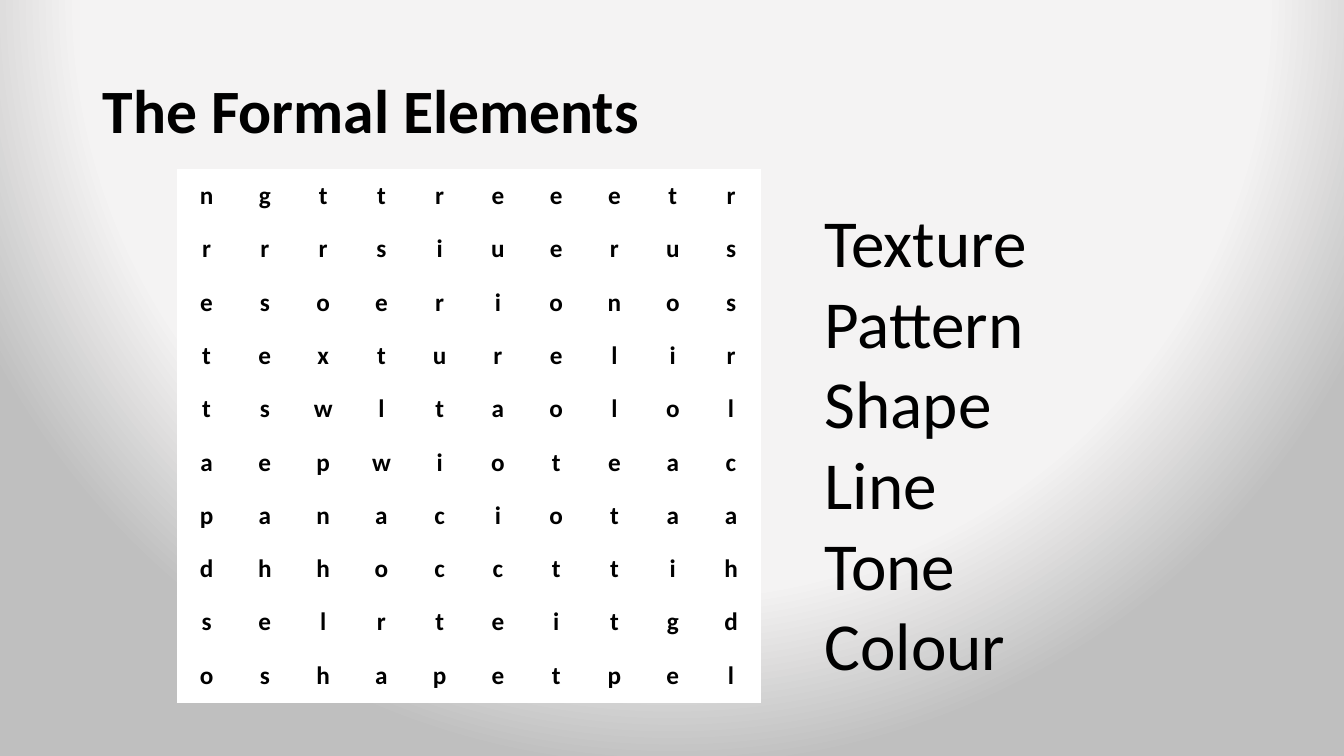
from pptx import Presentation
from pptx.dml.color import RGBColor
from pptx.enum.text import MSO_ANCHOR, MSO_AUTO_SIZE, PP_ALIGN
from pptx.oxml import parse_xml
from pptx.oxml.ns import nsdecls, qn
from pptx.util import Inches, Pt

LEFT, CENTER = PP_ALIGN.LEFT, PP_ALIGN.CENTER
MIDDLE = MSO_ANCHOR.MIDDLE
FIXED, GROW = MSO_AUTO_SIZE.NONE, MSO_AUTO_SIZE.SHAPE_TO_FIT_TEXT
FONT = "Calibri"
COLORS = {"ink": "000000", "cell": "FFFFFF", "glow": "F4F3F3", "edge": "BFBFBF"}
STOPS = [(0, "glow"), (40, "glow"), (77, "glow"), (100, "edge")]
LETTERS = [
    "ngttreeetr",
    "rrrsiuerus",
    "esoerionos",
    "texturelir",
    "tswltaolol",
    "aepwioteac",
    "panaciotaa",
    "dhhoccttih",
    "selrteitgd",
    "oshapetpel",
]
WORDS = ["Texture", "Pattern", "Shape", "Line", "Tone", "Colour"]


class Board:
    """Hold the slide and its style, and add each kind of element."""

    def __init__(self, slide):
        self.slide = slide

    def style(self, frame, size, bold=False, align=LEFT):
        for para in frame.paragraphs:
            para.alignment = align
            for run in para.runs:
                run.font.name = FONT
                run.font.size = Pt(size)
                run.font.bold = bold
                run.font.color.rgb = RGBColor.from_string(COLORS["ink"])

    def glow(self):
        self.slide.background.fill.gradient()
        old = self.slide.element.find(".//" + qn("a:gradFill"))
        stops = "".join(
            f'<a:gs pos="{pos * 1000}"><a:srgbClr val="{COLORS[name]}"/></a:gs>'
            for pos, name in STOPS
        )
        new = parse_xml(
            f'<a:gradFill {nsdecls("a")} rotWithShape="1"><a:gsLst>{stops}</a:gsLst>'
            '<a:path path="circle"><a:fillToRect l="10000" t="-25000" r="10000" '
            'b="125000"/></a:path></a:gradFill>'
        )
        old.getparent().replace(old, new)

    def title(self, text, box):
        shape = self.slide.shapes.title
        shape.left, shape.top, shape.width, shape.height = map(Inches, box)
        frame = shape.text_frame
        frame.text = text
        frame.auto_size = FIXED
        frame.vertical_anchor = MIDDLE
        frame.paragraphs[0].line_spacing = 0.9
        self.style(frame, 44, bold=True)

    def grid(self, rows, box):
        table = self.slide.shapes.add_table(
            len(rows), len(rows[0]), *map(Inches, box)
        ).table
        table.first_row = table.horz_banding = False
        for r, row in enumerate(rows):
            for c, letter in enumerate(row):
                cell = table.cell(r, c)
                cell.text_frame.text = letter
                cell.fill.solid()
                cell.fill.fore_color.rgb = RGBColor.from_string(COLORS["cell"])
                cell.margin_left = cell.margin_right = 0
                cell.margin_top = cell.margin_bottom = 0
                cell.vertical_anchor = MIDDLE
                self.style(cell.text_frame, 18, bold=True, align=CENTER)

    def words(self, lines, box):
        frame = self.slide.shapes.add_textbox(*map(Inches, box)).text_frame
        frame.word_wrap = True
        frame.auto_size = GROW
        frame.text = "\n".join(lines)
        self.style(frame, 48)


def main():
    deck = Presentation()
    deck.slide_width, deck.slide_height = Inches(13.33), Inches(7.5)
    board = Board(deck.slides.add_slide(deck.slide_layouts[5]))
    board.glow()
    board.title("The Formal Elements", (0.92, 0.4, 11.5, 1.45))
    board.grid(LETTERS, (1.76, 1.68, 5.78, 5.29))
    board.words(WORDS, (8.08, 1.94, 3.07, 4.95))
    deck.save("out.pptx")


if __name__ == "__main__":
    main()
